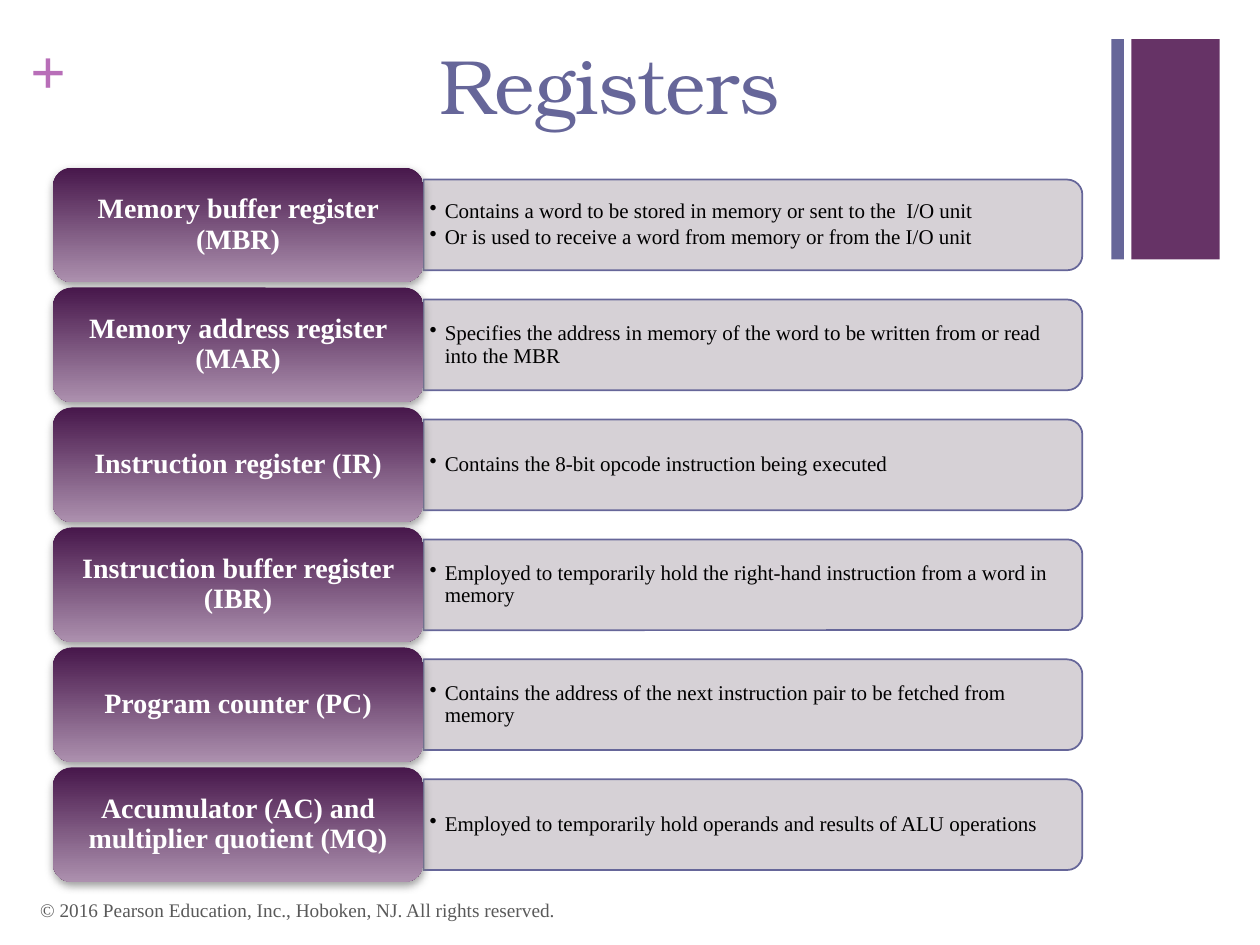
from lxml import etree
from pptx import Presentation
from pptx.dml.color import RGBColor
from pptx.enum import shapes, text
from pptx.oxml.ns import qn
from pptx.util import Inches, Pt

# Content
TITLE = "Registers"
COPYRIGHT = "© 2016 Pearson Education, Inc., Hoboken, NJ. All rights reserved."
REGISTERS = [
    ("Memory buffer register (MBR)",
     ["Contains a word to be stored in memory or sent to the  I/O unit",
      "Or is used to receive a word from memory or from the I/O unit"]),
    ("Memory address register (MAR)",
     ["Specifies the address in memory of the word to be written from or read into the MBR"]),
    ("Instruction register (IR)",
     ["Contains the 8-bit opcode instruction being executed"]),
    ("Instruction buffer register (IBR)",
     ["Employed to temporarily hold the right-hand instruction from a word in memory"]),
    ("Program counter (PC)",
     ["Contains the address of the next instruction pair to be fetched from memory"]),
    ("Accumulator (AC) and multiplier quotient (MQ)",
     ["Employed to temporarily hold operands and results of ALU operations"]),
]

THEME = {
    "heading_font": "TeX Gyre Bonum", "body_font": "Times New Roman",
    "plum": "663366", "slate": "666699", "orchid": "B86EB8",
    "panel": "D2CCD2", "label_top": "47174B", "label_bottom": "AC90AE",
    "shadow": "808080", "white": "FFFFFF", "black": "000000", "grey": "595959",
    "title": 44, "plus": 36, "label": 16, "detail": 12, "copyright": 11,
}

# Layout in inches
LEFT, TOP, BOTTOM = 0.42, 1.33, 7.0
LABEL_WIDTH, LABEL_HEIGHT = 2.94, 0.91
PANEL_WIDTH, PANEL_HEIGHT = 5.23, 0.72
DETAIL_WIDTH, DETAIL_HEIGHT = 5.19, 0.65
CORNER = 0.167
PITCH = (BOTTOM - TOP - LABEL_HEIGHT) / (len(REGISTERS) - 1)


def color(name):
    return RGBColor.from_string(THEME[name])


def add_child(parent, tag, **attributes):
    return etree.SubElement(parent, qn(tag), attributes)


def add_bullet(paragraph):
    paragraph.level = 1
    properties = paragraph._p.get_or_add_pPr()
    properties.set("marL", str(Inches(0.12)))
    properties.set("indent", str(Inches(-0.12)))
    bullet_color = add_child(properties, "a:buClr")
    add_child(bullet_color, "a:srgbClr", val=THEME["black"])
    add_child(properties, "a:buChar", char="•")


def write(shape, lines, *, size, fill, font="body_font", bold=False, align="LEFT",
          anchor="TOP", insets=(0.1, 0.05), spacing=None, bullets=False, wrap=True):
    frame = shape.text_frame
    frame.word_wrap = wrap
    frame.auto_size = text.MSO_AUTO_SIZE.NONE
    frame.vertical_anchor = text.MSO_ANCHOR[anchor]
    frame.margin_left = frame.margin_right = Inches(insets[0])
    frame.margin_top = frame.margin_bottom = Inches(insets[1])
    for index, line in enumerate(lines):
        paragraph = frame.add_paragraph() if index else frame.paragraphs[0]
        paragraph.alignment = text.PP_ALIGN[align]
        if spacing:
            paragraph.line_spacing = spacing
        if index:
            paragraph.space_before = Pt(1.8)
        if bullets:
            add_bullet(paragraph)
        run = paragraph.add_run()
        run.text = line
        run.font.name = THEME[font]
        run.font.size = Pt(THEME[size])
        run.font.bold = bold
        run.font.color.rgb = color(fill)


def add_box(slide, kind, left, top, width, height, fill=None):
    shape = slide.shapes.add_shape(kind, *map(Inches, (left, top, width, height)))
    shape.shadow.inherit = False
    shape.line.fill.background()
    if fill:
        shape.fill.solid()
        shape.fill.fore_color.rgb = color(fill)
    return shape


def add_textbox(slide, left, top, width, height, lines, **format):
    box = slide.shapes.add_textbox(*map(Inches, (left, top, width, height)))
    write(box, lines, **format)


def add_panel(slide, left, middle):
    # Turned a quarter so that the rounded corners face right
    panel = add_box(slide, shapes.MSO_SHAPE.ROUND_2_SAME_RECTANGLE,
                    left + (PANEL_WIDTH - PANEL_HEIGHT) / 2, middle - PANEL_WIDTH / 2,
                    PANEL_HEIGHT, PANEL_WIDTH, "panel")
    panel.rotation = 90
    panel.adjustments[0] = CORNER
    panel.line.color.rgb = color("slate")
    panel.line.width = Pt(1)
    fill_color = panel._element.spPr.find(qn("a:solidFill"))[0]
    add_child(fill_color, "a:alpha", val="90000")


def add_label(slide, top, name):
    label = add_box(slide, shapes.MSO_SHAPE.ROUNDED_RECTANGLE,
                    LEFT, top, LABEL_WIDTH, LABEL_HEIGHT)
    label.adjustments[0] = CORNER
    label.fill.gradient()
    label.fill.gradient_angle = 270
    for stop, position, shade in zip(label.fill.gradient_stops, (0, 1),
                                     ("label_top", "label_bottom")):
        stop.position = position
        stop.color.rgb = color(shade)
    effects = label._element.spPr.find(qn("a:effectLst"))
    shadow = add_child(effects, "a:outerShdw", blurRad=str(Pt(5)), dist=str(Pt(2)),
                       dir="5400000", rotWithShape="0")
    shadow_color = add_child(shadow, "a:srgbClr", val=THEME["shadow"])
    add_child(shadow_color, "a:alpha", val="75000")
    write(label, [name], size="label", fill="white", bold=True, align="CENTER",
          anchor="MIDDLE", insets=(0.07, 0.03), spacing=0.9)


def main():
    presentation = Presentation()
    presentation.slide_width, presentation.slide_height = Inches(10), Inches(7.5)
    slide = presentation.slides.add_slide(presentation.slide_layouts[5])

    # Corner decoration
    for left, width, fill in ((8.98, 0.7, "plum"), (8.82, 0.1, "slate")):
        add_box(slide, shapes.MSO_SHAPE.RECTANGLE, left, 0.31, width, 1.75, fill)
    add_textbox(slide, 0.24, 0.25, 0.29, 0.61, ["+"], size="plus", fill="orchid",
                bold=True, insets=(0, 0), wrap=False)

    # Title
    title = slide.shapes.title
    title.left, title.top, title.width, title.height = map(Inches, (0, 0.25, 6.29, 1.22))
    write(title, [TITLE], size="title", fill="slate", font="heading_font", align="RIGHT")

    # One row per register
    panel_left = LEFT + LABEL_WIDTH
    for row, (name, details) in enumerate(REGISTERS):
        top = TOP + row * PITCH
        middle = top + LABEL_HEIGHT / 2
        add_panel(slide, panel_left, middle)
        add_textbox(slide, panel_left, middle - DETAIL_HEIGHT / 2, DETAIL_WIDTH, DETAIL_HEIGHT,
                    details, size="detail", fill="black", anchor="MIDDLE",
                    insets=(0.05, 0.02), spacing=0.9, bullets=True)
        add_label(slide, top, name)

    # Copyright line
    add_textbox(slide, 0.22, 7.02, 6.7, 0.4, [COPYRIGHT], size="copyright", fill="grey",
                anchor="MIDDLE")
    presentation.save("out.pptx")


if __name__ == "__main__":
    main()
